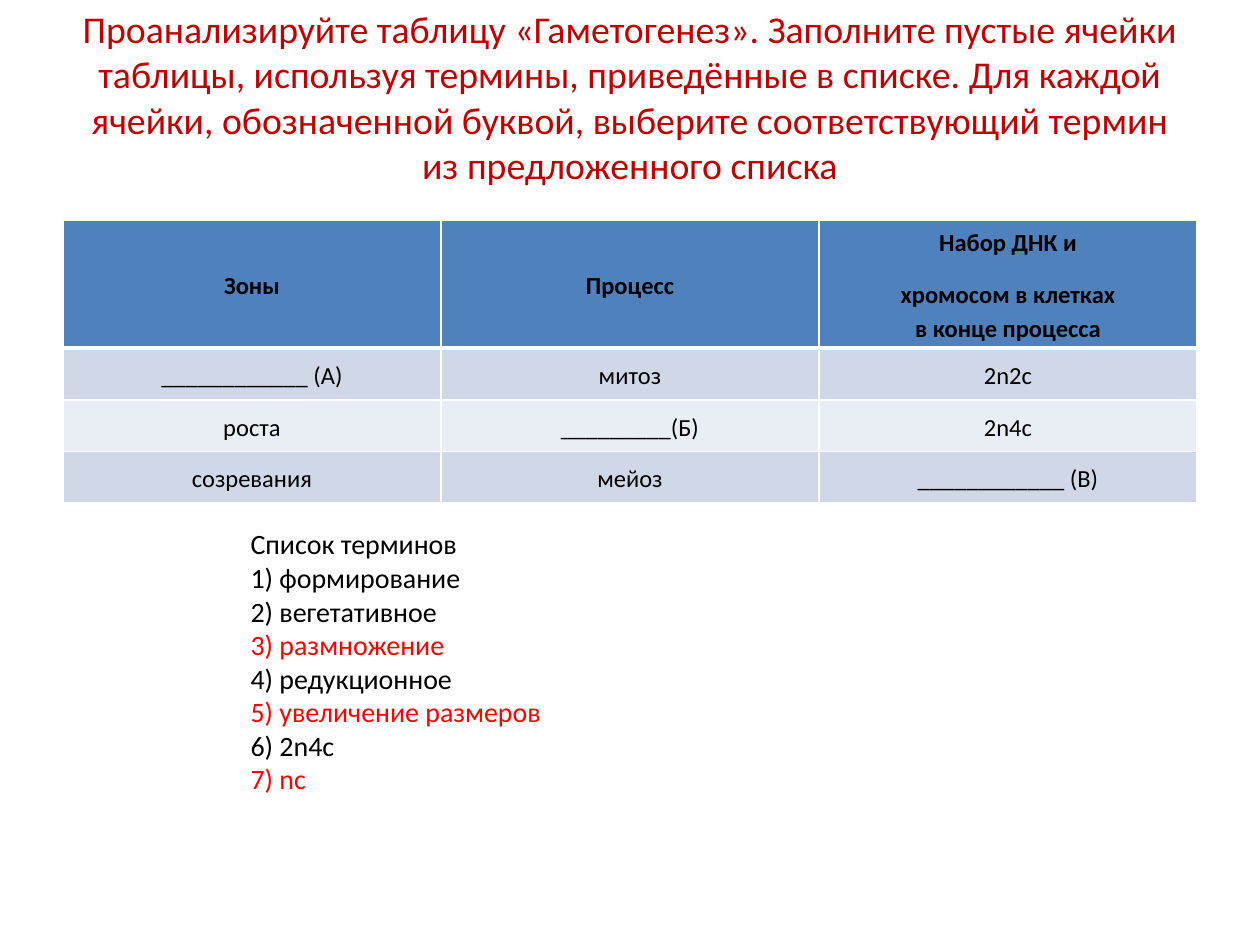
import pptx
import pptx.dml.color
import pptx.enum.text
import pptx.oxml.ns
import pptx.util
from lxml import etree

RGB = pptx.dml.color.RGBColor
PP_ALIGN = pptx.enum.text.PP_ALIGN
ANCHOR = pptx.enum.text.MSO_ANCHOR
Inches = pptx.util.Inches
Pt = pptx.util.Pt
qn = pptx.oxml.ns.qn

CRIMSON = RGB(0xC0, 0x00, 0x00)
RED = RGB(0xFF, 0x00, 0x00)
BLACK = RGB(0x00, 0x00, 0x00)
WHITE = RGB(0xFF, 0xFF, 0xFF)
HEADER_BLUE = RGB(0x4F, 0x81, 0xBD)
BANDS = (RGB(0xD0, 0xD8, 0xE8), RGB(0xE9, 0xED, 0xF4))

WIDTH, HEIGHT = Inches(10), Inches(7.5)
MARGIN = 0.05

TASK = (
    "Проанализируйте таблицу «Гаметогенез». Заполните пустые ячейки таблицы, "
    "используя термины, приведённые в списке. Для каждой ячейки, обозначенной "
    "буквой, выберите соответствующий термин из предложенного списка"
)
STAGES = (
    ("Зоны", "Процесс", "Набор ДНК и\nхромосом в клетках\nв конце процесса"),
    ("____________ (А)", "митоз", "2n2c"),
    ("роста", "_________(Б)", "2n4c"),
    ("созревания", "мейоз", "____________ (В)"),
)
TERMS = (
    "формирование",
    "вегетативное",
    "размножение",
    "редукционное",
    "увеличение размеров",
    "2n4c",
    "nc",
)
ANSWERS = (3, 5, 7)


def region(left, top, width, height):
    """Turn shares of the slide's size into a box of lengths."""
    return (int(WIDTH * left), int(HEIGHT * top), int(WIDTH * width), int(HEIGHT * height))


def format_runs(paragraph, size, color, bold=False):
    """Give every run of a paragraph its font."""
    for run in paragraph.runs:
        run.font.name = "Calibri"
        run.font.size = Pt(size)
        run.font.color.rgb = color
        run.font.bold = bold


def place_task(slide, box):
    """Put the task wording into the title placeholder."""
    task = slide.shapes.title
    task.left, task.top, task.width, task.height = box
    frame = task.text_frame
    frame.text = TASK
    frame.word_wrap = True
    frame.auto_size = pptx.enum.text.MSO_AUTO_SIZE.NONE
    frame.vertical_anchor = ANCHOR.MIDDLE
    frame.margin_bottom = Inches(0.77)
    frame.paragraphs[0].alignment = PP_ALIGN.CENTER
    format_runs(frame.paragraphs[0], 21.6, CRIMSON)


def add_borders(cell, top, bottom):
    """Draw white borders on a cell, with top and bottom widths in points."""
    properties = cell._tc.get_or_add_tcPr()
    for side, width in (("lnL", 1), ("lnR", 1), ("lnT", top), ("lnB", bottom)):
        line = etree.SubElement(properties, qn(f"a:{side}"), w=str(Pt(width)))
        fill = etree.SubElement(line, qn("a:solidFill"))
        etree.SubElement(fill, qn("a:srgbClr"), val=str(WHITE))


def fill_cell(cell, wording, row):
    """Write and format one cell of the stages table."""
    is_header = row == 0
    add_borders(cell, 3 if row == 1 else 1, 3 if is_header else 1)
    cell.fill.solid()
    cell.fill.fore_color.rgb = HEADER_BLUE if is_header else BANDS[(row - 1) % 2]
    cell.vertical_anchor = ANCHOR.MIDDLE
    cell.margin_left = cell.margin_right = Inches(0.03)
    cell.margin_top = cell.margin_bottom = Inches(0.03)
    cell.text_frame.text = wording
    for index, paragraph in enumerate(cell.text_frame.paragraphs):
        paragraph.alignment = PP_ALIGN.CENTER
        paragraph.line_spacing = 1.15
        paragraph.space_before = Pt(0 if is_header else 2.9)
        paragraph.space_after = Pt(10 if is_header and index == 0 else 0)
        format_runs(paragraph, 14, BLACK, is_header)


def place_stages(slide, box):
    """Lay out the gametogenesis table in equal columns under a tall header."""
    stages = slide.shapes.add_table(len(STAGES), len(STAGES[0]), *box).table
    row_height = Inches(0.41)
    for row, wordings in enumerate(STAGES):
        stages.rows[row].height = row_height
        for column, wording in enumerate(wordings):
            fill_cell(stages.cell(row, column), wording, row)
    stages.rows[0].height = box[3] - row_height * (len(STAGES) - 1)


def place_terms(slide, box):
    """List the numbered terms, with the answers in red."""
    frame = slide.shapes.add_textbox(*box).text_frame
    frame.word_wrap = True
    numbered = [f"{number}) {term}" for number, term in enumerate(TERMS, 1)]
    frame.text = "\n".join(["Список терминов", *numbered])
    for number, paragraph in enumerate(frame.paragraphs):
        paragraph._p.get_or_add_pPr().set("indent", str(Inches(0.2)))
        format_runs(paragraph, 16, RED if number in ANSWERS else BLACK)


def main():
    """Build the slide and save it."""
    deck = pptx.Presentation()
    deck.slide_width, deck.slide_height = WIDTH, HEIGHT
    slide = deck.slides.add_slide(deck.slide_layouts[5])
    content_width = 1 - 2 * MARGIN
    place_task(slide, region(MARGIN, 0.04, content_width, 0.22))
    place_stages(slide, region(MARGIN, 0.233, content_width, 0.296))
    place_terms(slide, region(0.169, 0.551, 0.308, 0.301))
    deck.save("out.pptx")


if __name__ == "__main__":
    main()
